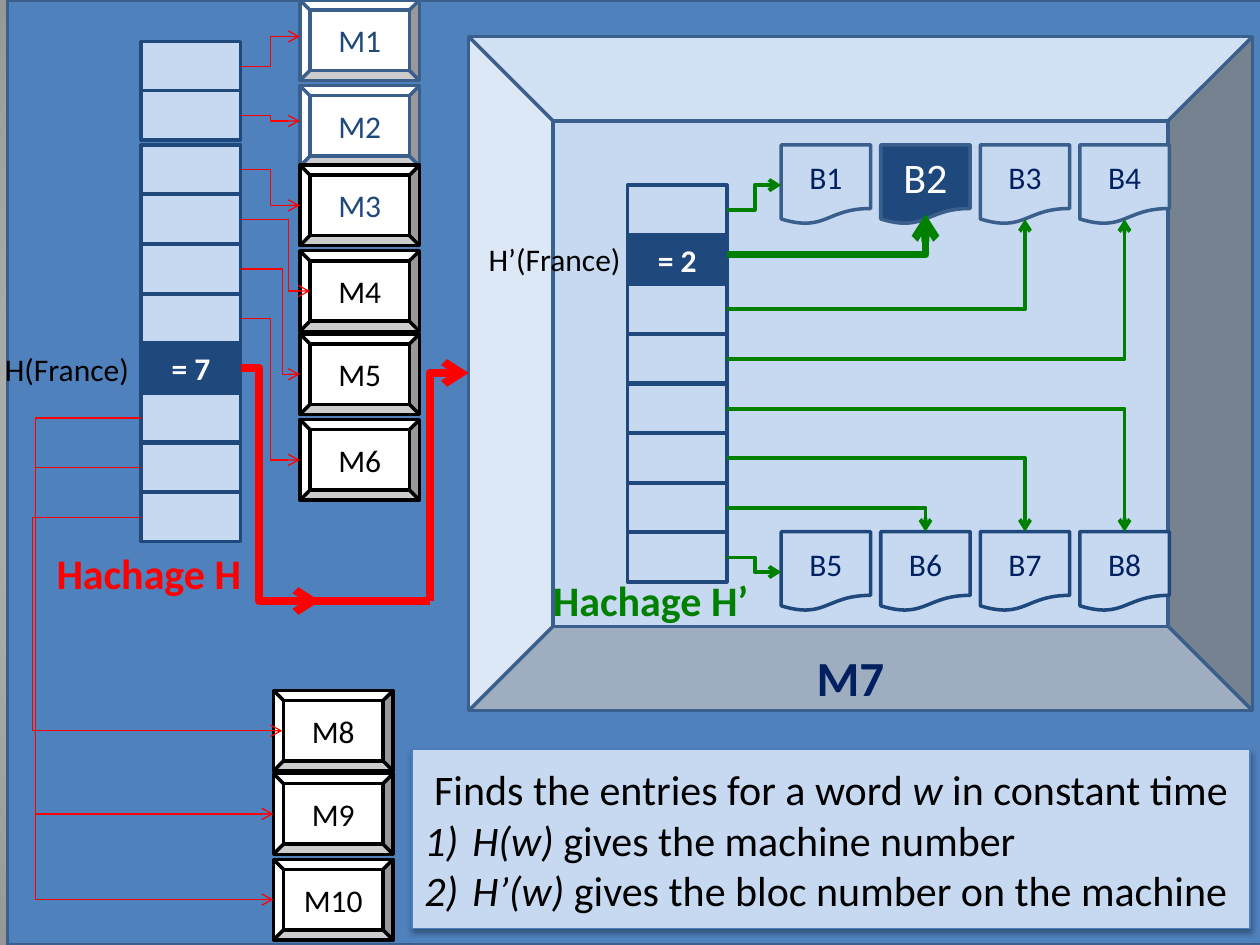
from lxml.etree import SubElement
from pptx import Presentation
from pptx.dml.color import RGBColor
from pptx.enum.shapes import MSO_CONNECTOR, MSO_SHAPE
from pptx.enum.text import MSO_ANCHOR, PP_ALIGN
from pptx.oxml.ns import qn
from pptx.util import Inches, Pt

PALE, NAVY, EDGE, INK = "C6D9F1", "1F497D", "3A5F8C", "002060"
BLACK, WHITE, RED, GREEN = "000000", "FFFFFF", "FF0000", "008000"
STEP, WIDE = 0.394, 0.79  # pitch and width of the hash table slots


def paint(fill, color):
    fill.solid()
    fill.fore_color.rgb = RGBColor.from_string(color)


def write(para, text, size=18, color=BLACK, bold=False, italic=False):
    run = para.add_run()
    run.text = text
    font = run.font
    font.name, font.size = "Calibri", Pt(size)
    font.bold, font.italic = bold, italic
    paint(font.fill, color)


def shape(slide, kind, box, fill=PALE, line=NAVY, width=2, text="", **style):
    item = slide.shapes.add_shape(kind, *map(Inches, box))
    item.shadow.inherit = False
    paint(item.fill, fill)
    paint(item.line.fill, line)
    item.line.width = Pt(width)
    frame = item.text_frame
    frame.vertical_anchor = MSO_ANCHOR.MIDDLE
    frame.paragraphs[0].alignment = PP_ALIGN.CENTER
    if text:
        write(frame.paragraphs[0], text, **style)
    return item


def label(slide, box, text, align=PP_ALIGN.LEFT, **style):
    frame = slide.shapes.add_textbox(*map(Inches, box)).text_frame
    frame.word_wrap = False
    frame.paragraphs[0].alignment = align
    write(frame.paragraphs[0], text, **style)


def link(slide, start, end, color, width, turn=None, kind="bentConnector3",
         tip="tailEnd"):
    """Draw a connector; turn is the x of the middle leg of an elbow."""
    item = slide.shapes.add_connector(
        MSO_CONNECTOR.ELBOW, *map(Inches, (*start, *end)))
    paint(item.line.fill, color)
    item.line.width = Pt(width)
    props = item.element.spPr
    geom = props.find(qn("a:prstGeom"))
    geom.set("prst", kind)
    if turn is not None:
        part = round((turn - start[0]) / (end[0] - start[0]) * 100000)
        guides = geom.find(qn("a:avLst"))
        if guides is None:
            guides = SubElement(geom, qn("a:avLst"))
        SubElement(guides, qn("a:gd"), name="adj1", fmla=f"val {part}")
    if tip:
        SubElement(props.find(qn("a:ln")), qn(f"a:{tip}"), type="arrow")
    SubElement(props, qn("a:effectLst"))


def slots(slide, left, tops, chosen, text):
    for i, top in enumerate(tops):
        hit = i == chosen
        shape(slide, MSO_SHAPE.RECTANGLE, (left, top, WIDE, 0.39),
              fill=NAVY if hit else PALE, text=text if hit else "",
              color=WHITE, bold=True)


def backdrop(slide):
    fill = slide.background.fill
    fill.gradient()
    for stop, color in zip(fill.gradient_stops, (WHITE, "979797")):
        stop.color.rgb = RGBColor.from_string(color)
    lin = slide.element.find(".//" + qn("a:lin"))
    grad = lin.getparent()
    grad.remove(lin)
    round_fill = SubElement(grad, qn("a:path"), {"path": "circle"})
    SubElement(round_fill, qn("a:fillToRect"),
               dict.fromkeys("ltrb", "50000"))
    shape(slide, MSO_SHAPE.RECTANGLE, (0.06, 0, 10, 7.5),
          fill="4F81BD", line=EDGE)


def machines(slide):
    rows = [0.33, 0.72] + [1.15 + STEP * i for i in range(8)]
    slots(slide, 1.12, rows, 6, "= 7")
    label(slide, (0.35, 4.3, 1.69, 0.5), "Hachage H",
          size=24, color=RED, bold=True)
    label(slide, (-0.06, 2.73, 1.2, 0.4), "H(France)")

    # Machine boxes: number, left, top
    upper = [(i + 1, 2.38, y)
             for i, y in enumerate((0, 0.68, 1.31, 1.99, 2.65, 3.33))]
    lower = [(i + 8, 2.17, y) for i, y in enumerate((5.48, 6.14, 6.82))]
    for num, left, top in upper + lower:
        shape(slide, MSO_SHAPE.BEVEL, (left, top, 0.95, 0.64), fill=WHITE,
              line=EDGE if num < 3 else BLACK, text=f"M{num}",
              color=NAVY if num < 4 else BLACK)

    # Thin links: slot, end x, end y, turn x
    for slot, x, y, turn in (
            (0, 2.38, 0.29, 2.15), (1, 2.38, 0.96, 2.15),
            (2, 2.38, 1.63, 2.15), (3, 2.46, 2.31, 2.29),
            (4, 2.38, 2.97, 2.24), (5, 2.38, 3.65, 2.15),
            (8, 2.17, 6.46, 0.28), (7, 2.17, 7.14, 0.28),
            (9, 2.24, 5.8, 0.26)):
        side = 1.12 if slot > 6 else 1.91
        link(slide, (side, rows[slot] + STEP / 2), (x, y), RED, 0.75, turn)

    # Thick route from the chosen slot to the large machine
    link(slide, (1.91, 2.92), (2.54, 4.77), RED, 4.5, 2.06)
    link(slide, (3.72, 2.96), (3.41, 4.77), RED, 4.5,
         kind="bentConnector2", tip="headEnd")
    link(slide, (2.38, 4.77), (3.41, 4.77), RED, 4.5, kind="line", tip=None)


def blocks(slide):
    rows = [1.47 + STEP * i for i in range(8)]
    slots(slide, 4.98, rows, 1, "= 2")
    label(slide, (4.29, 4.51, 1.77, 0.5), "Hachage H’",
          size=24, color=GREEN, bold=True)
    for i in range(8):
        line, col = divmod(i, 4)
        hit = i == 1
        shape(slide, MSO_SHAPE.FLOWCHART_DOCUMENT,
              (6.2 + WIDE * col, (1.15, 4.22)[line], 0.71, 0.63),
              fill=NAVY if hit else PALE, line=(EDGE, NAVY)[line],
              text=f"B{i + 1}", size=24 if hit else 18,
              color=WHITE if hit else INK)
    label(slide, (3.78, 1.86, 1.27, 0.4), "H’(France)")
    label(slide, (6.38, 5.09, 0.74, 0.57), "M7", PP_ALIGN.CENTER,
          size=28, color=INK, bold=True)

    # Links: the outer slots lead to the first column, the inner to the last
    for i, top in enumerate(rows):
        col = min(i, 7 - i)
        start = (5.77, top + STEP / 2)
        if col == 0:
            link(slide, start, (6.2, 1.47 if i == 0 else 4.54),
                 GREEN, 2.25, 5.99)
            continue
        hit = i == 1
        if hit:
            start = (5.77, 2.02)
        end = 1.7 if hit else 1.74 if i < 4 else 4.22
        link(slide, start, (6.555 + WIDE * col, end), GREEN,
             4.5 if hit else 2.25, kind="bentConnector2")


def summary(slide):
    card = shape(slide, MSO_SHAPE.RECTANGLE, (3.27, 5.95, 6.65, 1.42),
                 line="4B7EBC", width=0.75)
    shade = SubElement(card.element.spPr.find(qn("a:effectLst")),
                       qn("a:outerShdw"), blurRad="40000", dist="23000",
                       dir="5400000", rotWithShape="0")
    tint = SubElement(shade, qn("a:srgbClr"), val=BLACK)
    SubElement(tint, qn("a:alpha"), val="35000")

    frame = card.text_frame
    para = frame.paragraphs[0]
    write(para, "Finds the entries for a word ", size=24)
    write(para, "w ", size=24, italic=True)
    write(para, "in constant time", size=24)
    for name, rest in (("H(w)", " gives the machine number"),
                       ("H’(w)", " gives the bloc number on the machine")):
        para = frame.add_paragraph()
        para.alignment = PP_ALIGN.LEFT
        props = para._p.get_or_add_pPr()
        props.set("marL", str(Inches(0.38)))
        props.set("indent", str(-Inches(0.38)))
        SubElement(props, qn("a:buFont"), typeface="+mj-lt")
        SubElement(props, qn("a:buAutoNum"), type="arabicParenR")
        write(para, name, size=24, italic=True)
        write(para, rest, size=24)


def main():
    deck = Presentation()
    deck.slide_width, deck.slide_height = Inches(10), Inches(7.5)
    slide = deck.slides.add_slide(deck.slide_layouts[6])
    backdrop(slide)
    shape(slide, MSO_SHAPE.BEVEL, (3.72, 0.29, 6.22, 5.35), line=EDGE)
    machines(slide)
    blocks(slide)
    summary(slide)
    deck.save("out.pptx")


if __name__ == "__main__":
    main()
